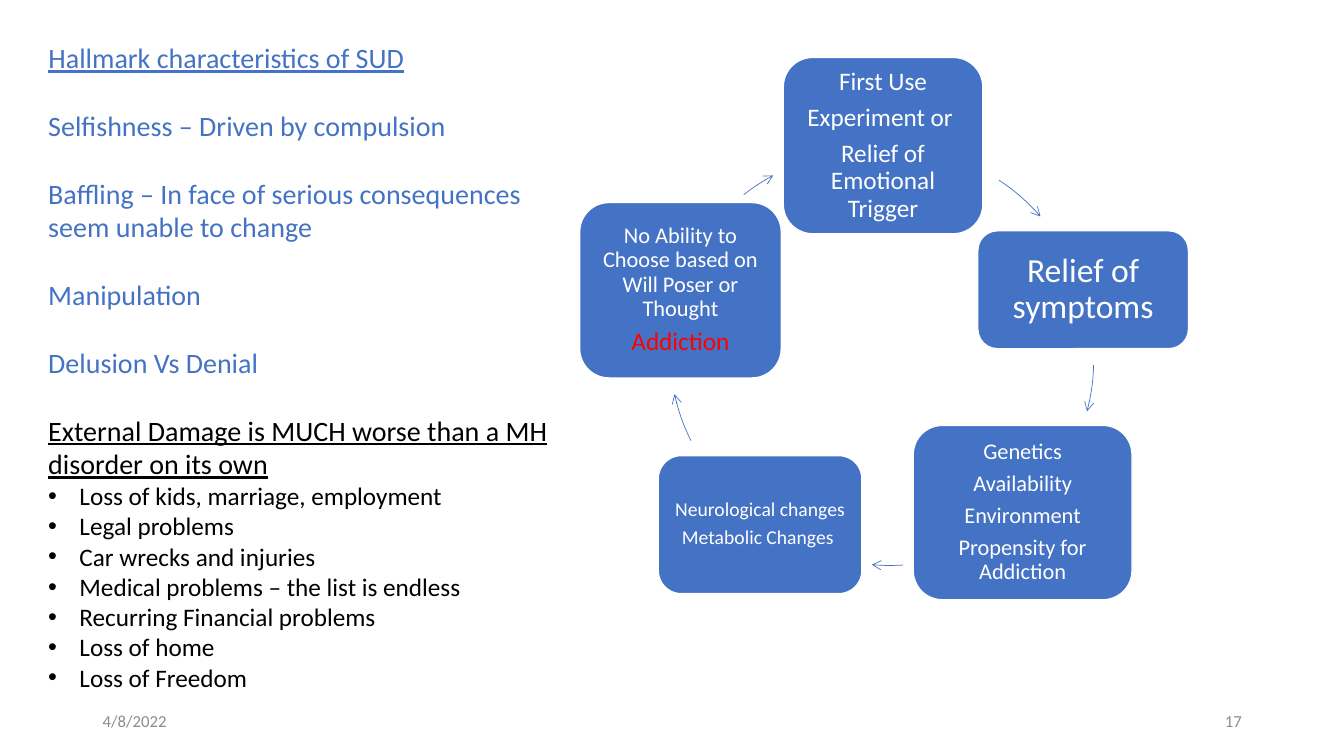
from dataclasses import dataclass

from lxml import etree
from pptx import Presentation
from pptx import util as u
from pptx.dml.color import RGBColor
from pptx.enum import shapes, text
from pptx.oxml import ns

WIDTH, HEIGHT = u.Inches(13.33), u.Inches(7.5)
FONT = "Calibri"
BLUE, WHITE, BLACK, RED, GREY = "4472C4", "FFFFFF", "000000", "FF0000", "8C8C8C"
GAP = 24.4  # one 20 pt line


@dataclass(frozen=True)
class Area:
    """Left, top, width and height in percent of the slide."""
    left: float
    top: float
    width: float
    height: float

    def emu(self) -> tuple[int, ...]:
        return (int(WIDTH * self.left / 100), int(HEIGHT * self.top / 100),
                int(WIDTH * self.width / 100), int(HEIGHT * self.height / 100))


@dataclass(frozen=True)
class Line:
    words: str
    size: float
    colour: str = WHITE
    underline: bool = False
    before: float = 0
    after: float = 0
    spacing: float = 1.0
    bullet: bool = False
    align: text.PP_ALIGN = text.PP_ALIGN.LEFT


@dataclass(frozen=True)
class Stage:
    area: Area
    inset: float
    size: float
    words: tuple[str, ...]
    highlight: str = ""


@dataclass(frozen=True)
class Arc:
    """Part of the cycle's circle, between two clockwise angles."""
    left: float
    top: float
    start: float
    end: float


TITLE = Line("Hallmark characteristics of SUD", 20, BLUE, underline=True)
TRAITS = ("Selfishness – Driven by compulsion",
          "Baffling – In face of serious consequences seem unable to change",
          "Manipulation", "Delusion Vs Denial")
DAMAGE = "External Damage is MUCH worse than a MH disorder on its own"
LOSSES = ("Loss of kids, marriage, employment", "Legal problems",
          "Car wrecks and injuries", "Medical problems – the list is endless",
          "Recurring Financial problems", "Loss of home", "Loss of Freedom")

STAGES = (
    Stage(Area(58.28, 7.6, 14.85, 23.33), 0.07, 18,
          ("First Use", "Experiment or ", "Relief of Emotional Trigger")),
    Stage(Area(72.75, 30.53, 15.68, 15.6), 0.1, 24, ("Relief of symptoms",)),
    Stage(Area(67.95, 56.27, 16.28, 23.07), 0.07, 16,
          ("Genetics", "Availability", "Environment", "Propensity for Addiction")),
    Stage(Area(48.98, 60.27, 15.15, 18.27), 0.06, 14,
          ("Neurological changes", "Metabolic Changes ")),
    Stage(Area(43.13, 26.8, 15, 23.2), 0.07, 16,
          ("No Ability to Choose based on Will Poser or Thought",), "Addiction"),
)
ARCS = (Arc(50.1, 19.2, 303.6, 318.7), Arc(50.18, 19.73, 1.7, 14.5),
        Arc(50.63, 19.33, 86.4, 95), Arc(49.8, 18.27, 153.7, 167.2),
        Arc(49.35, 19.87, 232, 241.6))


def colour(value: str) -> RGBColor:
    return RGBColor.from_string(value)


def write(frame, lines, anchor=text.MSO_ANCHOR.TOP) -> None:
    frame.word_wrap = True
    frame.auto_size = text.MSO_AUTO_SIZE.NONE
    frame.vertical_anchor = anchor
    for index, line in enumerate(lines):
        para = frame.add_paragraph() if index else frame.paragraphs[0]
        para.alignment = line.align
        para.line_spacing = line.spacing
        para.space_before, para.space_after = u.Pt(line.before), u.Pt(line.after)
        if line.bullet:
            props = para._p.get_or_add_pPr()
            props.set("marL", str(u.Inches(0.31)))
            props.set("indent", str(-u.Inches(0.31)))
            etree.SubElement(props, ns.qn("a:buFont"), typeface="Arial")
            etree.SubElement(props, ns.qn("a:buChar"), char="•")
        span = para.add_run()
        span.text = line.words
        span.font.name, span.font.size = FONT, u.Pt(line.size)
        span.font.underline = line.underline
        span.font.color.rgb = colour(line.colour)


def add_text(page, area: Area, lines, anchor=text.MSO_ANCHOR.TOP) -> None:
    write(page.shapes.add_textbox(*area.emu()).text_frame, lines, anchor)


def add_stage(page, stage: Stage) -> None:
    box = page.shapes.add_shape(shapes.MSO_SHAPE.ROUNDED_RECTANGLE, *stage.area.emu())
    box.shadow.inherit = False
    box.fill.solid()
    box.fill.fore_color.rgb = colour(BLUE)
    box.line.color.rgb = colour(WHITE)
    box.line.width = u.Pt(1)
    frame = box.text_frame
    frame.margin_left = frame.margin_right = u.Inches(stage.inset)
    frame.margin_top = frame.margin_bottom = u.Inches(stage.inset)
    parts = [(words, stage.size, WHITE) for words in stage.words]
    if stage.highlight:
        parts.append((stage.highlight, 18, RED))
    write(frame, [Line(words, size, tint, after=round(0.35 * size, 1), spacing=0.9,
                       align=text.PP_ALIGN.CENTER) for words, size, tint in parts],
          text.MSO_ANCHOR.MIDDLE)


def add_arc(page, arc: Arc) -> None:
    curve = page.shapes.add_shape(shapes.MSO_SHAPE.ARC,
                                  *Area(arc.left, arc.top, 31.2, 55.47).emu())
    curve.shadow.inherit = False
    # Angles are stored in 60000ths of a degree, adjustments in 100000ths
    curve.adjustments[0] = arc.start * 0.6
    curve.adjustments[1] = arc.end * 0.6
    curve.fill.background()
    curve.line.color.rgb = colour(BLUE)
    curve.line.width = u.Pt(0.5)
    etree.SubElement(curve.line._get_or_add_ln(), ns.qn("a:tailEnd"), type="arrow")


def main() -> None:
    deck = Presentation()
    deck.slide_width, deck.slide_height = WIDTH, HEIGHT
    page = deck.slides.add_slide(deck.slide_layouts[5])

    # Title
    title = page.shapes.title
    title.left, title.top, title.width, title.height = Area(2.85, 4.67, 39.45, 6).emu()
    write(title.text_frame, [TITLE])

    # Traits and losses
    body = [Line(words, 20, BLUE, before=GAP if index else 0)
            for index, words in enumerate(TRAITS)]
    body.append(Line(DAMAGE, 20, BLACK, underline=True, before=GAP))
    body += [Line(words, 18, BLACK, bullet=True) for words in LOSSES]
    add_text(page, Area(2.85, 13.7, 39.45, 79), body)

    # Cycle
    for stage, arc in zip(STAGES, ARCS):
        add_stage(page, stage)
        add_arc(page, arc)

    # Footer
    for left, words, align in ((6.9, "4/8/2022", text.PP_ALIGN.LEFT),
                               (70.65, "17", text.PP_ALIGN.RIGHT)):
        add_text(page, Area(left, 92.67, 22.5, 5.33),
                 [Line(words, 12, GREY, align=align)], text.MSO_ANCHOR.MIDDLE)

    deck.save("out.pptx")


if __name__ == "__main__":
    main()
